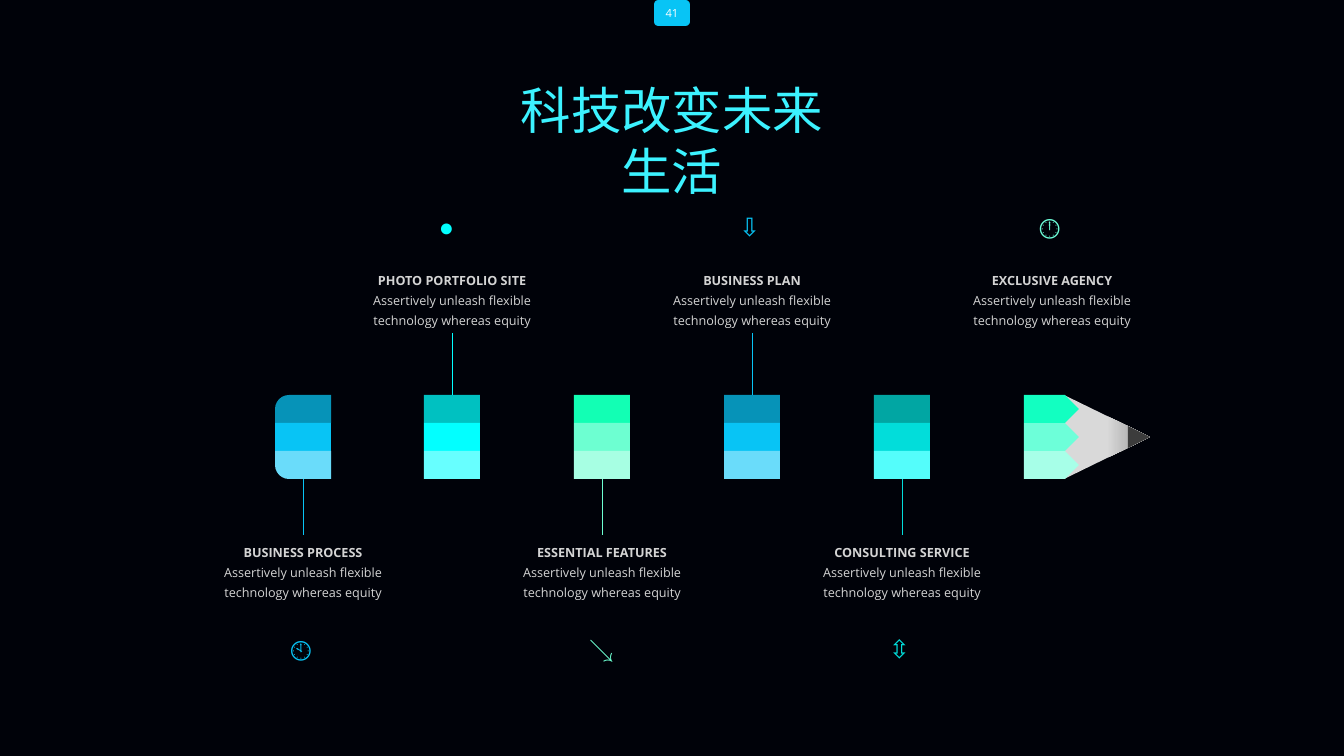
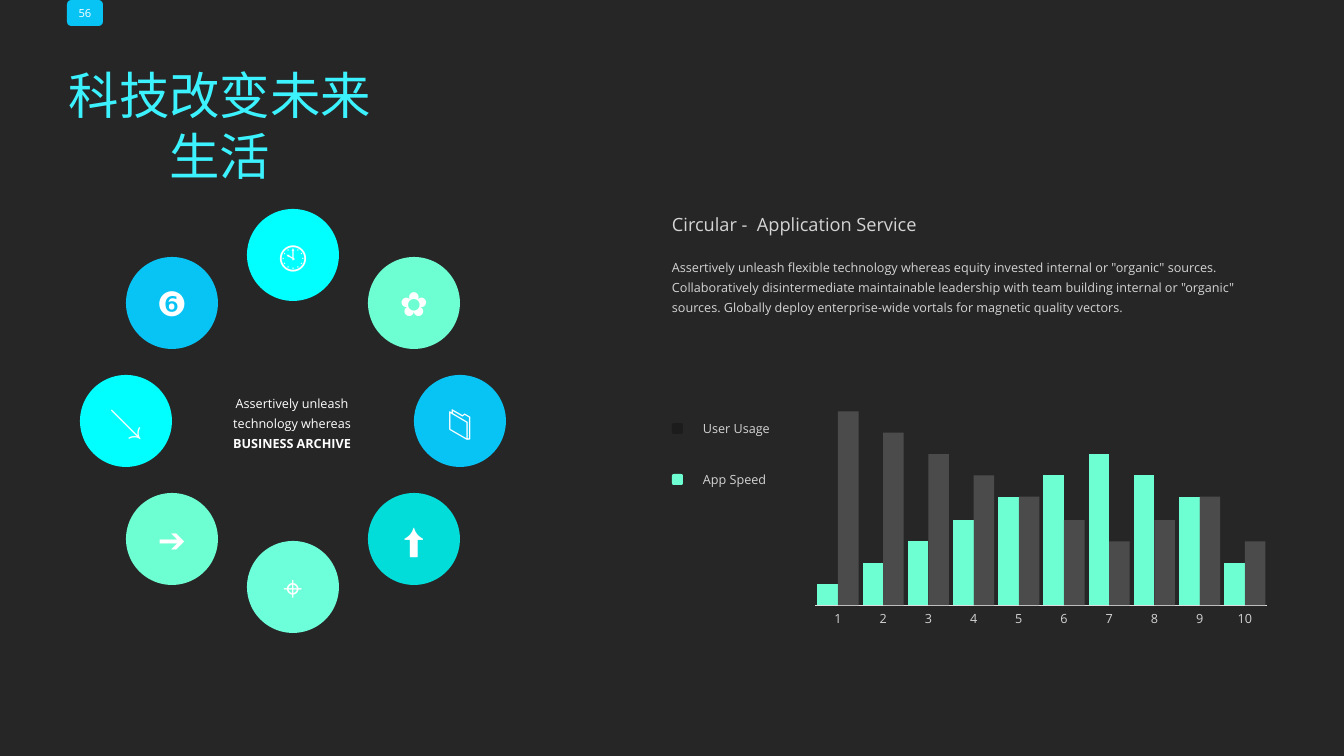
from dataclasses import dataclass
from math import cos, radians, sin

from lxml.etree import SubElement
from pptx import Presentation
from pptx.chart.data import CategoryChartData
from pptx.dml.color import RGBColor
from pptx.enum.chart import XL_CHART_TYPE as ChartType, XL_TICK_MARK as TickMark
from pptx.enum.shapes import MSO_CONNECTOR as Connector, MSO_SHAPE as Shape
from pptx.enum.text import MSO_ANCHOR as Anchor, MSO_AUTO_SIZE as AutoSize, PP_ALIGN as Align
from pptx.oxml import parse_xml
from pptx.oxml.ns import nsdecls, qn
from pptx.util import Emu, Pt

EMU_PER_PX = 914400 / 100.8


@dataclass(frozen=True)
class Theme:
    night: str = "000209"
    charcoal: str = "262626"
    title: str = "3CF2FF"
    text: str = "D4D4D4"
    white: str = "FFFFFF"
    blue: str = "08C4F5"
    cyan: str = "02FFFF"
    teal: str = "02DDDA"
    mint: str = "6DFFD1"
    aqua: str = "6DFFD9"
    wood: str = "D9D9D9"
    wood_shade: str = "929292"
    lead: str = "3C3C3C"
    usage_key: str = "1C1C1C"
    usage_bar: str = "5C5C5C"
    axis: str = "DEDEDE"
    latin: str = "Open Sans"
    cjk: str = "Noto Sans CJK SC"
    symbol: str = "Arial"
    title_size: int = 36
    ring_size: int = 24
    icon_size: int = 18
    heading_size: int = 13
    body_size: int = 9
    badge_size: int = 8
    title_leading: float = 43.5
    heading_leading: float = 20.6
    body_leading: float = 14.3


T = Theme()
BLUES = ("0693B8", T.blue, "6ADCFA")
BLURB = "Assertively unleash flexible technology whereas equity"

# heading, icon, accent, shades of the three stripes
STEPS = [
    ("BUSINESS PROCESS", "🕙", T.blue, BLUES),
    ("PHOTO PORTFOLIO SITE", "●", T.cyan, ("00C1C1", T.cyan, "67FFFF")),
    ("ESSENTIAL FEATURES", "↘", T.mint, ("12FFB4", T.mint, "A7FFE3")),
    ("BUSINESS PLAN", "⇩", T.blue, BLUES),
    ("CONSULTING SERVICE", "⇳", T.teal, ("01A6A3", T.teal, "54FDFB")),
    ("EXCLUSIVE AGENCY", "🕛", T.aqua, ("12FFC1", T.aqua, "A7FFE8")),
]
# clockwise from the top
RING = [("🕙", T.cyan), ("✿", T.mint), ("📁", T.blue), ("⬆", T.teal),
        ("⌖", T.aqua), ("➔", T.mint), ("↘", T.cyan), ("❻", T.blue)]
APP_SPEED = (11, 22, 33, 44, 56, 67, 78, 67, 56, 22)
USER_USAGE = (100, 89, 78, 67, 56, 44, 33, 44, 56, 33)


def px(length):
    return Emu(round(length * EMU_PER_PX))


def rgb(color):
    return RGBColor.from_string(color)


def add_run(paragraph, text, size, color, font=T.latin, bold=False):
    run = paragraph.add_run()
    run.text = text
    run.font.size = Pt(size)
    run.font.bold = bold
    run.font.color.rgb = rgb(color)
    run.font.name = font
    SubElement(run._r.get_or_add_rPr(), qn("a:ea"), typeface=font)


def write(frame, lines, align=Align.LEFT, leading=None, anchor=Anchor.TOP, margins=(10, 5)):
    """Fill a text frame; each line holds the arguments of add_run after the paragraph."""
    frame.word_wrap = True
    frame.auto_size = AutoSize.NONE
    frame.vertical_anchor = anchor
    frame.margin_left = frame.margin_right = px(margins[0])
    frame.margin_top = frame.margin_bottom = px(margins[1])
    for index, line in enumerate(lines):
        paragraph = frame.add_paragraph() if index else frame.paragraphs[0]
        paragraph.alignment = align
        if leading:
            paragraph.line_spacing = Pt(leading)
        add_run(paragraph, *line)


def add_text(slide, box, lines, **style):
    label = slide.shapes.add_textbox(*map(px, box))
    write(label.text_frame, lines, **style)
    return label


def paint(shape, color):
    shape.shadow.inherit = False
    shape.line.fill.background()
    shape.fill.solid()
    shape.fill.fore_color.rgb = rgb(color)


def add_block(slide, kind, box, color):
    block = slide.shapes.add_shape(kind, *map(px, box))
    paint(block, color)
    return block


def add_point(slide, box, color):
    """Add a triangle that points right and fills the box."""
    left, top, width, height = box
    outline = slide.shapes.build_freeform(left, top, scale=EMU_PER_PX)
    outline.add_line_segments([(left + width, top + height / 2), (left, top + height)])
    point = outline.convert_to_shape()
    paint(point, color)
    return point


def start_slide(deck, background, number, badge_left, title_left, title_top):
    slide = deck.slides.add_slide(deck.slide_layouts[5])
    slide.background.fill.solid()
    slide.background.fill.fore_color.rgb = rgb(background)
    badge = add_block(slide, Shape.ROUNDED_RECTANGLE, (badge_left, 0, 36, 26), T.blue)
    write(badge.text_frame, [(number, T.badge_size, T.white)],
          align=Align.CENTER, anchor=Anchor.MIDDLE, margins=(0, 0))
    title = slide.shapes.title
    title.left, title.top, title.width, title.height = map(px, (title_left, title_top, 326, 140))
    write(title.text_frame, [("科技改变未来生活", T.title_size, T.title, T.cjk)],
          align=Align.CENTER, leading=T.title_leading, margins=(0, 9))
    return slide


def add_stripes(slide, box, shades, rounded):
    """Stack three stripes, with round left corners if asked; return them from the top."""
    left, top, width, height = box
    row = height // 3
    stripes = []
    for index, shade in enumerate(shades):
        y = top + index * row
        if rounded and index == 0:
            inset = (width - row) // 2
            stripe = add_block(slide, Shape.ROUND_1_RECTANGLE,
                               (left + inset, y - inset, row, width), shade)
            stripe.rotation = 270
        elif rounded and index == 2:
            stripe = add_block(slide, Shape.ROUND_1_RECTANGLE, (left, y, width, row), shade)
            stripe.rotation = 180
        else:
            stripe = add_block(slide, Shape.RECTANGLE, (left, y, width, row), shade)
        if stripe.rotation:
            stripe.adjustments[0] = 0.5
        stripes.append(stripe)
    return stripes


def add_pencil_tip(slide, box, shades):
    left, top, width, height = box
    cone = add_point(slide, (left + 40, top, width - 40, height), T.wood)
    cone.fill.gradient()
    cone.fill.gradient_angle = 0
    for stop, position, color in zip(cone.fill.gradient_stops, (0.5, 1), (T.wood, T.wood_shade)):
        stop.position = position
        stop.color.rgb = rgb(color)
    add_point(slide, (left + width - 22, top + height // 2 - 11, 22, 22), T.lead)
    row = height // 3
    for index, shade in reversed(list(enumerate(shades))):
        add_block(slide, Shape.PENTAGON, (left, top + index * row, 55, row), shade)


def add_leader(slide, x, start, end, color):
    leader = slide.shapes.add_connector(Connector.STRAIGHT, *map(px, (x, start, x, end)))
    leader.line.color.rgb = rgb(color)
    leader.line.width = Pt(0.5)
    SubElement(leader._element.spPr, qn("a:effectLst"))
    return leader


def add_step(slide, index, center, band_top, step):
    """Add one pencil part with its label and icon; odd steps are labelled above."""
    heading, icon, accent, shades = step
    band_height = 84
    above = index % 2 == 1
    is_tip = index == len(STEPS) - 1
    label_top = band_top - 132 if above else band_top + band_height + 56
    label = add_text(slide, (center - 109, label_top, 218, 70),
                     [(heading, T.body_size, T.text, T.latin, True),
                      (BLURB, T.body_size, T.text)],
                     align=Align.CENTER, leading=T.body_leading)
    icon_top = label_top - 57 if above else label_top + 93
    add_text(slide, (center - 23, icon_top, 46, 40), [(icon, T.icon_size, accent, T.symbol)])
    if is_tip:
        add_pencil_tip(slide, (center - 28, band_top, 126, band_height), shades)
        return
    stripes = add_stripes(slide, (center - 28, band_top, 56, band_height), shades, index == 0)
    block_edge = band_top if above else band_top + band_height
    label_edge = label_top + 70 if above else label_top
    leader = add_leader(slide, center, block_edge, label_edge, accent)
    stripe = stripes[0 if above else 2]
    if not stripe.rotation:
        leader.begin_connect(stripe, 0 if above else 2)
    leader.end_connect(label, 2 if above else 0)


def build_pencil_slide(deck):
    slide = start_slide(deck, T.night, "41", 654, 509, 70)
    for index, step in enumerate(STEPS):
        add_step(slide, index, 303 + 749 * index // 5, 395, step)


def add_ring(slide, center_x, center_y):
    size = 92
    for index, (icon, color) in enumerate(RING):
        angle = radians(index * 360 / len(RING))
        reach_x, reach_y = (167, 166) if index % 2 == 0 else (171, 167)
        x = round(center_x + reach_x * sin(angle))
        y = round(center_y - reach_y * cos(angle))
        disc = add_block(slide, Shape.OVAL, (x - size // 2, y - size // 2, size, size), color)
        write(disc.text_frame, [(icon, T.ring_size, T.white, T.symbol)],
              align=Align.CENTER, anchor=Anchor.MIDDLE, margins=(0, 0))
    add_text(slide, (center_x - 106, center_y - 35, 210, 70),
             [("Assertively unleash", T.body_size, T.white),
              ("technology whereas", T.body_size, T.white),
              ("BUSINESS ARCHIVE", T.body_size, T.white, T.latin, True)],
             align=Align.CENTER, leading=T.body_leading)


def add_summary(slide, box):
    summary = add_text(slide, box, [
        ("Circular -  Application Service", T.heading_size, T.text),
        ('Assertively unleash flexible technology whereas equity invested internal or "organic" '
         'sources. Collaboratively disintermediate maintainable leadership with team building '
         'internal or "organic" sources. Globally deploy enterprise-wide vortals for magnetic '
         'quality vectors.', T.body_size, T.text)], leading=T.body_leading)
    heading = summary.text_frame.paragraphs[0]
    heading.line_spacing = Pt(T.heading_leading)
    heading.space_after = Pt(T.body_leading)


def add_legend(slide, left, top):
    for index, (name, color) in enumerate([("User Usage", T.usage_key), ("App Speed", T.mint)]):
        y = top + index * 51
        add_block(slide, Shape.ROUNDED_RECTANGLE, (left, y, 11, 11), color)
        add_text(slide, (left + 31, y - 7, 100, 25), [(name, T.body_size, T.text)],
                 anchor=Anchor.MIDDLE, margins=(0, 0))


def add_usage_chart(slide, box):
    data = CategoryChartData()
    data.categories = [str(number) for number in range(1, 11)]
    data.add_series("Series 1", APP_SPEED)
    data.add_series("Series 2", USER_USAGE)
    chart = slide.shapes.add_chart(ChartType.COLUMN_CLUSTERED, *map(px, box), data).chart
    chart.has_legend = chart.has_title = False
    chart.font.name, chart.font.size = T.latin, Pt(T.body_size)
    chart.font.color.rgb = rgb(T.text)
    values, numbers = chart.value_axis, chart.category_axis
    values.visible = values.has_major_gridlines = False
    values.minimum_scale, values.maximum_scale = 0, 100
    numbers.major_tick_mark = TickMark.NONE
    numbers.format.line.color.rgb = rgb(T.axis)
    numbers.format.line.width = Pt(0.75)
    plot = chart.plots[0]
    plot.vary_by_categories = False
    plot.gap_width, plot.overlap = 20, 0
    for series, color in zip(plot.series, (T.mint, T.usage_bar)):
        series.format.fill.solid()
        series.format.fill.fore_color.rgb = rgb(color)
    usage_color = next(plot.series[1]._element.iter(qn("a:srgbClr")))
    SubElement(usage_color, qn("a:alpha"), val="70000")
    area = chart._chartSpace.chart.plotArea
    for layout in area.findall(qn("c:layout")):
        area.remove(layout)
    parts = [("layoutTarget", "inner"), ("xMode", "edge"), ("yMode", "edge"),
             ("x", 0.02), ("y", 0.11), ("w", 0.96), ("h", 0.78)]
    entries = "".join(f'<c:{name} val="{value}"/>' for name, value in parts)
    area.insert(0, parse_xml(f'<c:layout {nsdecls("c")}><c:manualLayout>{entries}'
                             '</c:manualLayout></c:layout>'))


def build_ring_slide(deck):
    slide = start_slide(deck, T.charcoal, "56", 67, 57, 55)
    add_ring(slide, 293, 421)
    add_summary(slide, (662, 201, 615, 118))
    add_usage_chart(slide, (806, 384, 471, 249))
    add_legend(slide, 672, 423)


def main():
    deck = Presentation()
    deck.slide_width, deck.slide_height = px(1344), px(756)
    build_pencil_slide(deck)
    build_ring_slide(deck)
    deck.save("out.pptx")


if __name__ == "__main__":
    main()
